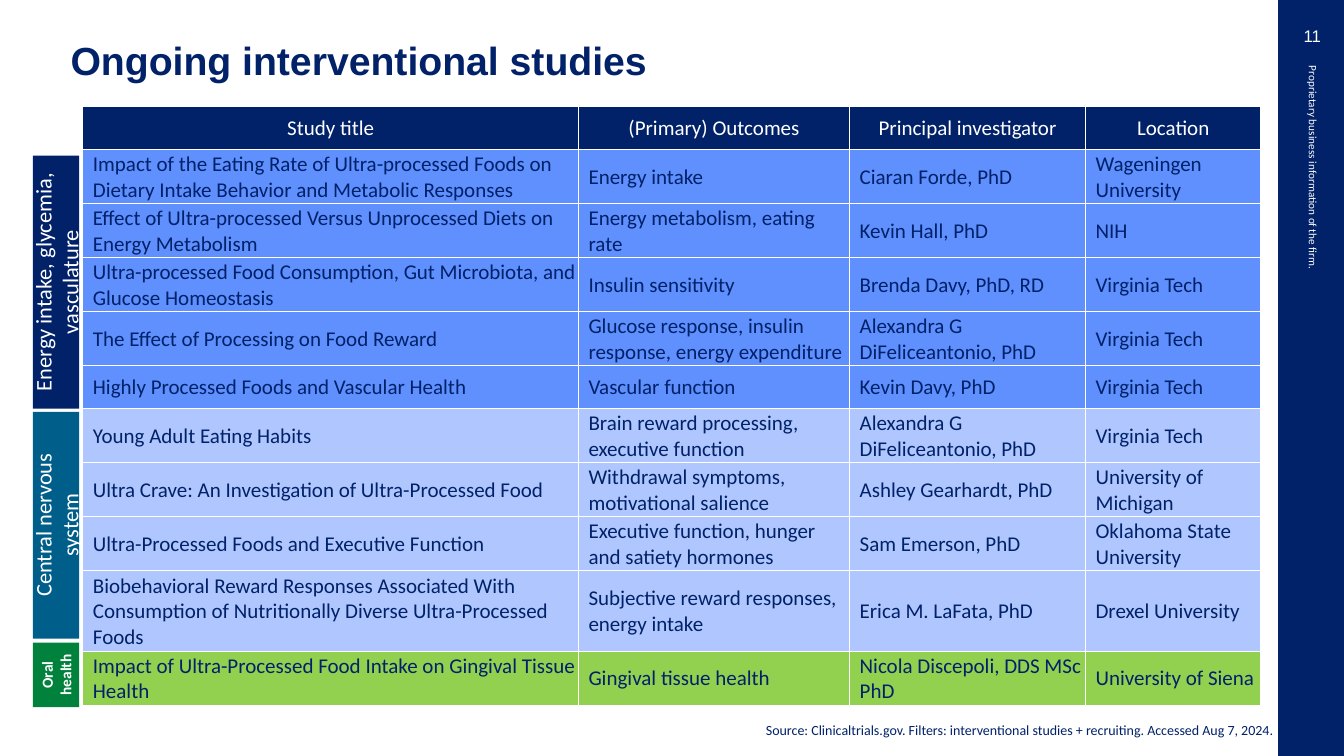
from dataclasses import dataclass
from typing import NamedTuple

from lxml.etree import SubElement
from pptx import Presentation
from pptx.dml.color import RGBColor
from pptx.enum.shapes import MSO_SHAPE as Shape
from pptx.enum.text import MSO_ANCHOR as Anchor, PP_ALIGN as Align
from pptx.oxml.ns import qn
from pptx.util import Pt

COLORS = {
    "navy": "012169",
    "teal": "005E8B",
    "green": "00823C",
    "blue": "5F90FD",
    "pale": "AFC7FE",
    "lime": "92D050",
    "white": "FFFFFF",
}
BODY_FONT = "Calibri"
HEADING_FONT = "Arial"

BAND_CENTER = 40
BAND_WIDTH = 33.1
TABLE_LEFT, TABLE_TOP = 59.2, 76.3
COLUMN_WIDTHS = [354, 193.7, 168.5, 125.3]
HEADINGS = ["Study title", "(Primary) Outcomes", "Principal investigator", "Location"]
HEADER_HEIGHT = 30.7


class Study(NamedTuple):
    title: str
    outcomes: str
    investigator: str
    location: str
    height: float = 38.6


@dataclass
class Topic:
    label: str
    band_color: str
    row_color: str
    top: float
    length: float
    studies: list[Study]
    size: float = 16
    bold: bool = False


@dataclass
class Note:
    text: str
    left: float
    top: float
    width: float
    height: float
    size: float
    color: str
    font: str = BODY_FONT
    align: Align = Align.LEFT
    rotation: float = 0


TOPICS = [
    Topic("Energy intake, glycemia, vasculature", "navy", "blue", 111.2, 180.7, [
        Study("Impact of the Eating Rate of Ultra-processed Foods on Dietary Intake Behavior "
              "and Metabolic Responses",
              "Energy intake", "Ciaran Forde, PhD", "Wageningen University"),
        Study("Effect of Ultra-processed Versus Unprocessed Diets on Energy Metabolism",
              "Energy metabolism, eating rate", "Kevin Hall, PhD", "NIH"),
        Study("Ultra-processed Food Consumption, Gut Microbiota, and Glucose Homeostasis",
              "Insulin sensitivity", "Brenda Davy, PhD, RD", "Virginia Tech"),
        Study("The Effect of Processing on Food Reward",
              "Glucose response, insulin response, energy expenditure",
              "Alexandra G DiFeliceantonio, PhD", "Virginia Tech"),
        Study("Highly Processed Foods and Vascular Health",
              "Vascular function", "Kevin Davy, PhD", "Virginia Tech", 30.7),
    ]),
    Topic("Central nervous system", "teal", "pale", 294.1, 162, [
        Study("Young Adult Eating Habits", "Brain reward processing, executive function",
              "Alexandra G DiFeliceantonio, PhD", "Virginia Tech"),
        Study("Ultra Crave: An Investigation of Ultra-Processed Food",
              "Withdrawal symptoms, motivational salience",
              "Ashley Gearhardt, PhD", "University of Michigan"),
        Study("Ultra-Processed Foods and Executive Function",
              "Executive function, hunger and satiety hormones",
              "Sam Emerson, PhD", "Oklahoma State University"),
        Study("Biobehavioral Reward Responses Associated With Consumption of Nutritionally "
              "Diverse Ultra-Processed Foods",
              "Subjective reward responses, energy intake",
              "Erica M. LaFata, PhD", "Drexel University", 57.5),
    ]),
    Topic("Oral health", "green", "lime", 459, 46.1, [
        Study("Impact of Ultra-Processed Food Intake on Gingival Tissue Health",
              "Gingival tissue health", "Nicola Discepoli, DDS MSc PhD", "University of Siena"),
    ], size=11, bold=True),
]

NOTES = [
    Note("Proprietary business information of the firm.", 792.7, 172.1, 285.8, 21.6, 8, "white",
         rotation=90),
    Note("11", 914.4, 15.1, 46.1, 38.9, 12, "white", HEADING_FONT, Align.CENTER),
    Note("Source: Clinicaltrials.gov. Filters: interventional studies + recruiting. "
         "Accessed Aug 7, 2024.", 540, 511.9, 380.9, 15.1, 10, "navy"),
]


def rgb(color: str) -> RGBColor:
    return RGBColor.from_string(COLORS[color])


def write(frame, text: str, size: float, color: str, font: str = BODY_FONT,
          align: Align = Align.LEFT, bold: bool = False) -> None:
    paragraph = frame.paragraphs[0]
    paragraph.alignment = align
    run = paragraph.add_run()
    run.text = text
    run.font.size = Pt(size)
    run.font.name = font
    run.font.bold = bold
    run.font.color.rgb = rgb(color)


def add_block(slide, left: float, top: float, width: float, height: float, color: str):
    block = slide.shapes.add_shape(Shape.RECTANGLE, Pt(left), Pt(top), Pt(width), Pt(height))
    block.shadow.inherit = False
    block.fill.solid()
    block.fill.fore_color.rgb = rgb(color)
    block.line.fill.background()
    return block


def add_note(slide, note: Note) -> None:
    box = slide.shapes.add_textbox(Pt(note.left), Pt(note.top), Pt(note.width), Pt(note.height))
    box.rotation = note.rotation
    box.text_frame.word_wrap = True
    write(box.text_frame, note.text, note.size, note.color, note.font, note.align)


def add_band(slide, topic: Topic) -> None:
    middle = topic.top + topic.length / 2
    band = add_block(slide, BAND_CENTER - topic.length / 2, middle - BAND_WIDTH / 2,
                     topic.length, BAND_WIDTH, topic.band_color)
    band.rotation = 270
    band.text_frame.word_wrap = True
    band.text_frame.vertical_anchor = Anchor.MIDDLE
    write(band.text_frame, topic.label, topic.size, "white", align=Align.CENTER, bold=topic.bold)


def style_cell(cell, color: str) -> None:
    cell.vertical_anchor = Anchor.MIDDLE
    properties = cell._tc.get_or_add_tcPr()
    for side in ("a:lnL", "a:lnR", "a:lnT", "a:lnB"):
        border = SubElement(properties, qn(side), w=str(Pt(1)))
        SubElement(SubElement(border, qn("a:solidFill")), qn("a:srgbClr"), val=COLORS["white"])
    cell.fill.solid()
    cell.fill.fore_color.rgb = rgb(color)


def add_study_table(slide) -> None:
    rows = [(study, topic.row_color) for topic in TOPICS for study in topic.studies]
    heights = [HEADER_HEIGHT] + [study.height for study, _ in rows]
    table = slide.shapes.add_table(
        len(heights), len(HEADINGS), Pt(TABLE_LEFT), Pt(TABLE_TOP),
        Pt(sum(COLUMN_WIDTHS)), Pt(sum(heights))).table
    for column, width in zip(table.columns, COLUMN_WIDTHS):
        column.width = Pt(width)
    for row, height in zip(table.rows, heights):
        row.height = Pt(height)
    for column, heading in enumerate(HEADINGS):
        cell = table.cell(0, column)
        style_cell(cell, "navy")
        write(cell.text_frame, heading, 15, "white", align=Align.CENTER)
    for row, (study, color) in enumerate(rows, start=1):
        for column, text in enumerate(study[:len(HEADINGS)]):
            cell = table.cell(row, column)
            cell.margin_left, cell.margin_right = Pt(7.2), Pt(0.72)
            cell.margin_top, cell.margin_bottom = Pt(0.72), Pt(0)
            style_cell(cell, color)
            write(cell.text_frame, text, 15, "navy")


def add_title(slide, text: str) -> None:
    title = slide.shapes.title
    title.left, title.top, title.width, title.height = Pt(43.2), Pt(25.9), Pt(858.2), Pt(72)
    title.text_frame.vertical_anchor = Anchor.TOP
    title.text_frame.paragraphs[0].line_spacing = 0.9
    write(title.text_frame, text, 28, "navy", HEADING_FONT, bold=True)


def main() -> None:
    deck = Presentation()
    deck.slide_width, deck.slide_height = Pt(960), Pt(540)
    slide = deck.slides.add_slide(deck.slide_layouts[5])
    add_block(slide, 913, 0, 47, 540, "navy")
    add_title(slide, "Ongoing interventional studies")
    add_study_table(slide)
    for note in NOTES:
        add_note(slide, note)
    for topic in TOPICS:
        add_band(slide, topic)
    deck.save("out.pptx")


if __name__ == "__main__":
    main()
